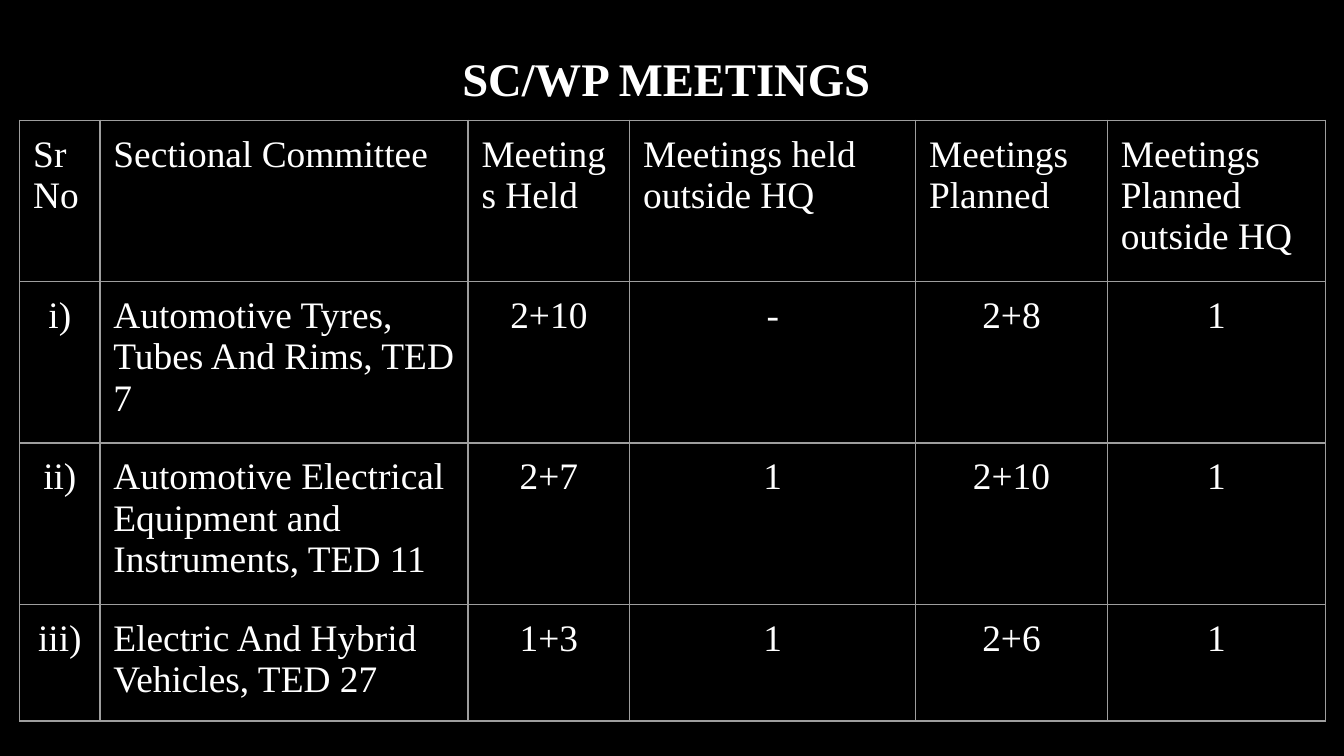
import pptx
import pptx.util
import pptx.dml.color
import pptx.enum.text
import pptx.oxml
import pptx.oxml.ns

Pt = pptx.util.Pt
ALIGN = pptx.enum.text.PP_ALIGN
INSET = Pt(7.2)


def color(code):
    return pptx.dml.color.RGBColor.from_string(code)


def style(para, size, bold, align):
    para.alignment = align
    for run in para.runs:
        run.font.name = "Times New Roman"
        run.font.size = Pt(size)
        run.font.bold = bold
        run.font.color.rgb = color("FFFFFF")


# Slide with black background
deck = pptx.Presentation()
deck.slide_width, deck.slide_height = Pt(720), Pt(405)
slide = deck.slides.add_slide(deck.slide_layouts[6])
slide.background.fill.solid()
slide.background.fill.fore_color.rgb = color("000000")

# Title
title = slide.shapes.add_textbox(Pt(24.5), Pt(19), Pt(671), Pt(45))
frame = title.text_frame
frame.word_wrap = True
frame.vertical_anchor = pptx.enum.text.MSO_ANCHOR.BOTTOM
frame.margin_left = frame.margin_right = INSET
frame.margin_top = frame.margin_bottom = INSET
frame.text = "SC/WP MEETINGS "
style(frame.paragraphs[0], 25, True, ALIGN.CENTER)

# Meetings table
rows = [
    ["Sr No", "Sectional Committee", "Meetings Held", "Meetings held outside HQ",
     "Meetings Planned", "Meetings Planned outside HQ"],
    ["i)", "Automotive Tyres, Tubes And Rims, TED 7", "2+10", "-", "2+8", "1"],
    ["ii)", "Automotive Electrical Equipment and Instruments, TED 11",
     "2+7", "1", "2+10", "1"],
    ["iii)", "Electric And Hybrid Vehicles, TED 27", "1+3", "1", "2+6", "1"],
]
widths = [43, 197.2, 86.6, 153.2, 102.7, 116.8]
holder = slide.shapes.add_table(len(rows), len(widths), Pt(10.6), Pt(64.4),
                                Pt(sum(widths)), Pt(30 * len(rows)))
table = holder.table
table.first_row = table.horz_banding = False
for column, width in zip(table.columns, widths):
    column.width = Pt(width)

# Cells: text, margins, thin grey borders, no fill
for r, row in enumerate(rows):
    for c, text in enumerate(row):
        cell = table.cell(r, c)
        cell.text_frame.text = text
        left = r == 0 or c == 1
        style(cell.text_frame.paragraphs[0], 20, False,
              ALIGN.LEFT if left else ALIGN.CENTER)
        cell.margin_left = cell.margin_right = INSET
        cell.margin_top = cell.margin_bottom = INSET
        props = cell._tc.get_or_add_tcPr()
        for side in ("lnL", "lnR", "lnT", "lnB"):
            props.append(pptx.oxml.parse_xml(
                f'<a:{side} {pptx.oxml.ns.nsdecls("a")} w="{Pt(0.75)}">'
                '<a:solidFill><a:srgbClr val="9E9E9E"/></a:solidFill>'
                f'</a:{side}>'))
        cell.fill.background()

deck.save("out.pptx")
